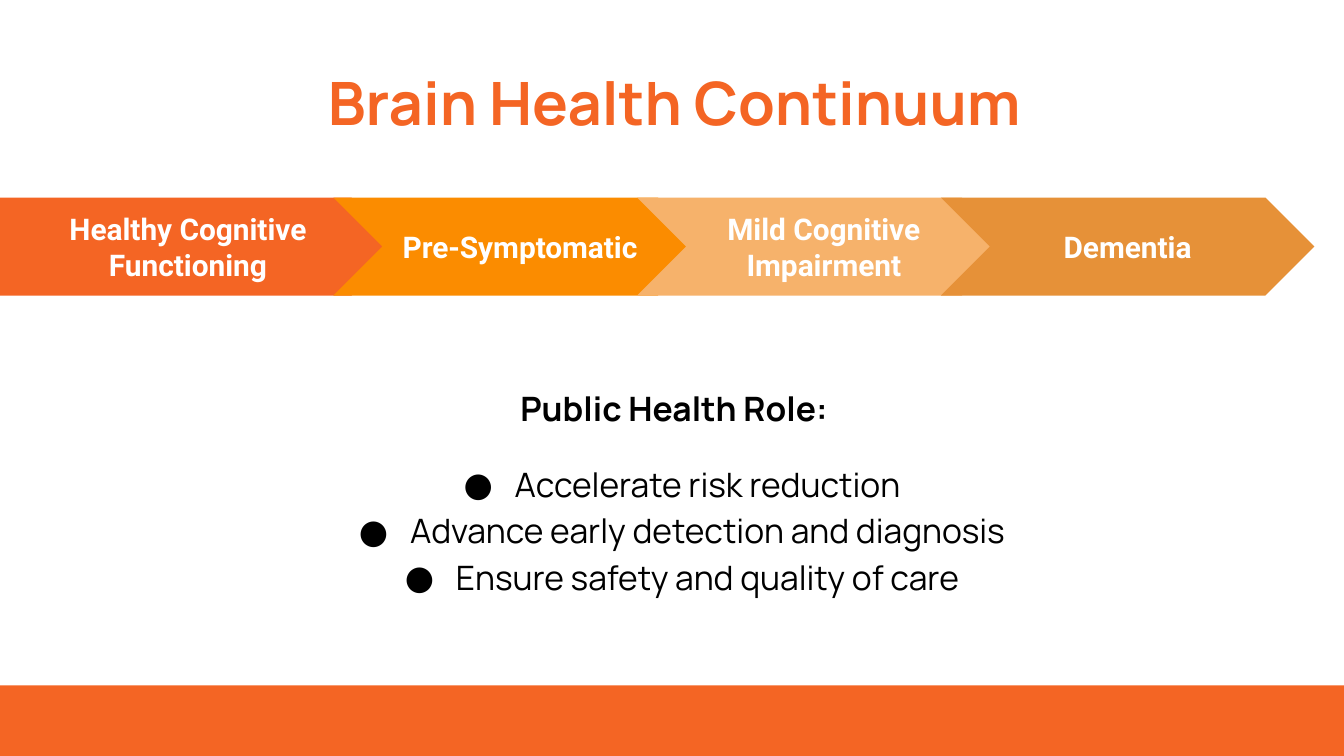
from lxml import etree
from pptx import Presentation
from pptx.dml.color import RGBColor
from pptx.enum.shapes import MSO_SHAPE
from pptx.enum.text import MSO_ANCHOR, PP_ALIGN
from pptx.oxml.ns import qn
from pptx.util import Inches, Pt

RECT, PENTAGON, CHEVRON = MSO_SHAPE.RECTANGLE, MSO_SHAPE.PENTAGON, MSO_SHAPE.CHEVRON
TOP, MIDDLE = MSO_ANCHOR.TOP, MSO_ANCHOR.MIDDLE
CENTER = PP_ALIGN.CENTER

ORANGE = RGBColor(0xF4, 0x65, 0x24)
AMBER = RGBColor(0xFB, 0x8C, 0x00)
PEACH = RGBColor(0xF6, 0xB2, 0x6B)
OCHRE = RGBColor(0xE6, 0x91, 0x38)
WHITE = RGBColor(0xFF, 0xFF, 0xFF)
BLACK = RGBColor(0, 0, 0)

TITLE = "Brain Health Continuum"
STAGES = [
    ("Healthy Cognitive Functioning", ORANGE),
    ("Pre-Symptomatic", AMBER),
    ("Mild Cognitive Impairment", PEACH),
    ("Dementia", OCHRE),
]
ROLE_HEADING = "Public Health Role:"
ROLES = [
    "Accelerate risk reduction",
    "Advance early detection and diagnosis",
    "Ensure safety and quality of care",
]

TITLE_FONT = {"name": "Manrope", "size": Pt(32), "bold": True}
STAGE_FONT = {"name": "Roboto", "size": Pt(16), "bold": True}
HEADING_FONT = {"name": "Manrope", "size": Pt(18), "bold": True}
ROLE_FONT = {**HEADING_FONT, "bold": False}

STAGE_TOP, STAGE_HEIGHT = 1.47, 0.73
FIRST_WIDTH, CHEVRON_WIDTH = 2.98, 2.78
CHEVRON_LEFT, CHEVRON_STEP = 2.48, 2.26


def set_frame(tf, anchor):
    tf.word_wrap = True
    tf.vertical_anchor = anchor
    for side in ("left", "right", "top", "bottom"):
        setattr(tf, f"margin_{side}", Inches(0.1))


def write(p, text, font, color):
    p.alignment = CENTER
    r = p.add_run()
    r.text = text
    for name, value in font.items():
        setattr(r.font, name, value)
    r.font.color.rgb = color


def add_bullet(p):
    pPr = p._p.get_or_add_pPr()
    pPr.set("marL", str(Inches(0.5)))
    pPr.set("indent", str(Inches(-0.38)))
    color = etree.SubElement(pPr, qn("a:buClr"))
    etree.SubElement(color, qn("a:srgbClr"), val=str(BLACK))
    etree.SubElement(pPr, qn("a:buFont"), typeface=ROLE_FONT["name"])
    etree.SubElement(pPr, qn("a:buChar"), char="●")


def add_block(slide, kind, box, color):
    sp = slide.shapes.add_shape(kind, *map(Inches, box))
    sp.shadow.inherit = False
    sp.fill.solid()
    sp.fill.fore_color.rgb = color
    sp.line.fill.background()
    return sp


def add_stages(slide):
    for i, (text, color) in enumerate(STAGES):
        if i == 0:
            kind, left, width = PENTAGON, 0, FIRST_WIDTH
        else:
            kind, width = CHEVRON, CHEVRON_WIDTH
            left = CHEVRON_LEFT + (i - 1) * CHEVRON_STEP
        sp = add_block(slide, kind, (left, STAGE_TOP, width, STAGE_HEIGHT), color)
        sp.adjustments[0] = 0.5
        set_frame(sp.text_frame, MIDDLE)
        write(sp.text_frame.paragraphs[0], text, STAGE_FONT, WHITE)


def add_title(slide):
    title = slide.shapes.title
    title.left, title.top, title.width, title.height = map(Inches, (0.97, 0.39, 8.1, 1.07))
    set_frame(title.text_frame, TOP)
    write(title.text_frame.paragraphs[0], TITLE, TITLE_FONT, ORANGE)


def add_roles(slide):
    tf = slide.shapes.add_textbox(*map(Inches, (0.38, 2.74, 9.27, 1.99))).text_frame
    set_frame(tf, TOP)
    p = tf.paragraphs[0]
    p.line_spacing = 1.15
    write(p, ROLE_HEADING, HEADING_FONT, BLACK)
    for i, role in enumerate(ROLES):
        p = tf.add_paragraph()
        p.line_spacing = 1.15
        p.space_before = Pt(16 if i == 0 else 0)
        write(p, role, ROLE_FONT, BLACK)
        add_bullet(p)


def main():
    prs = Presentation()
    prs.slide_width = Inches(10)
    prs.slide_height = prs.slide_width * 9 // 16
    slide = prs.slides.add_slide(prs.slide_layouts.get_by_name("Title Only"))
    add_block(slide, RECT, (0, 5.1, 10, 0.53), ORANGE)
    add_stages(slide)
    add_title(slide)
    add_roles(slide)
    prs.save("out.pptx")


if __name__ == "__main__":
    main()
